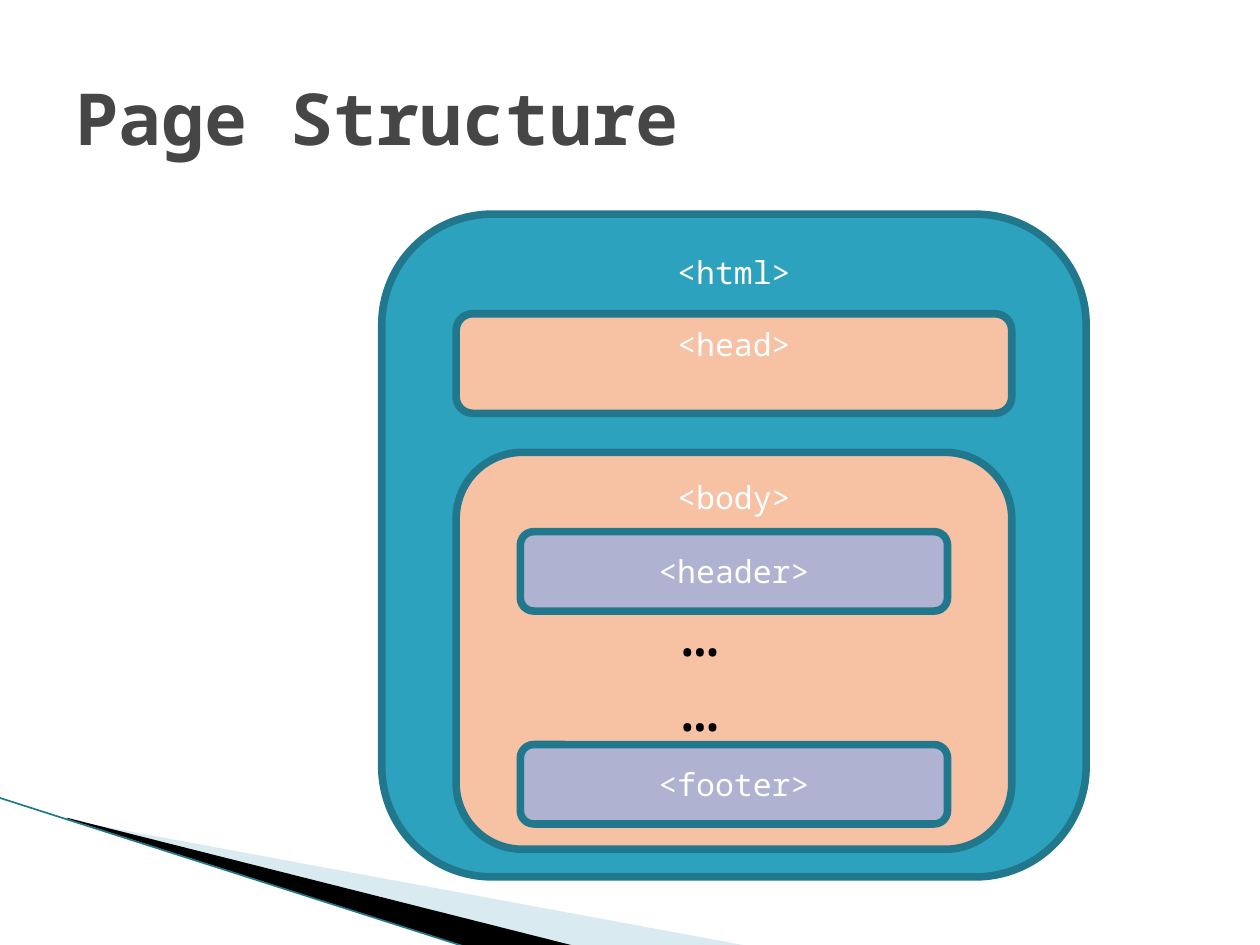
from lxml import etree
from pptx import Presentation, util as u
from pptx.dml.color import RGBColor
from pptx.enum import shapes, text
from pptx.oxml.ns import qn

WIDTH, HEIGHT = u.Inches(10), u.Inches(7.5)
FONT = "Noto Sans Mono"
TEAL = RGBColor(0x2D, 0xA2, 0xBF)
DARK_TEAL = RGBColor(0x21, 0x78, 0x8D)
PEACH = RGBColor(0xF7, 0xC1, 0xA4)
LILAC = RGBColor(0xAF, 0xB2, 0xD0)
PALE_BLUE = RGBColor(0xA0, 0xCB, 0xDC)
GREY = RGBColor(0x46, 0x46, 0x46)
BLACK = RGBColor(0, 0, 0)
WHITE = RGBColor(0xFF, 0xFF, 0xFF)


def write(frame, words, size, color, align, anchor, bold=False):
    """Put one formatted run into a text frame."""
    frame.word_wrap = True
    frame.vertical_anchor = anchor
    para = frame.paragraphs[0]
    para.alignment = align
    span = para.add_run()
    span.text = words
    span.font.name = FONT
    span.font.size = u.Pt(size)
    span.font.bold = bold
    span.font.color.rgb = color


def add_title(page, words):
    """Place and fill the title placeholder."""
    title = page.shapes.title
    title.left, title.top = int(WIDTH * 0.05), int(HEIGHT * 0.04)
    title.width, title.height = int(WIDTH * 0.9), u.Inches(1.25)
    write(title.text_frame, words, 41, GREY, text.PP_ALIGN.LEFT,
          text.MSO_ANCHOR.MIDDLE, bold=True)


def add_wedge(page, points, color, opacity=100):
    """Draw a filled corner wedge through points given in inches."""
    corners = [(u.Inches(x), u.Inches(y)) for x, y in points]
    builder = page.shapes.build_freeform(*corners[0])
    builder.add_line_segments(corners[1:], close=True)
    wedge = builder.convert_to_shape()
    wedge.shadow.inherit = False
    wedge.fill.solid()
    wedge.fill.fore_color.rgb = color
    wedge.line.fill.background()
    if opacity < 100:
        tint = wedge.fill._xPr.find(".//" + qn("a:srgbClr"))
        etree.SubElement(tint, qn("a:alpha"), val=str(opacity * 1000))


def add_edge(page, start, end):
    """Draw the thin line along the corner wedges."""
    edge = page.shapes.add_connector(
        shapes.MSO_CONNECTOR.STRAIGHT, *map(u.Inches, start + end))
    edge.line.color.rgb = DARK_TEAL
    edge.line.width = u.Pt(0.95)
    etree.SubElement(edge._element.spPr, qn("a:effectLst"))


def add_element(page, tag, area, color, anchor):
    """Draw a rounded box labelled with an HTML tag."""
    box = page.shapes.add_shape(
        shapes.MSO_SHAPE.ROUNDED_RECTANGLE, *map(u.Inches, area))
    box.shadow.inherit = False
    box.fill.solid()
    box.fill.fore_color.rgb = color
    box.line.color.rgb = DARK_TEAL
    box.line.width = u.Pt(4.33)
    write(box.text_frame, tag, 18, WHITE, text.PP_ALIGN.CENTER, anchor)


def add_dots(page, words, area):
    """Add the wrapped ellipses between header and footer."""
    box = page.shapes.add_textbox(*map(u.Inches, area))
    write(box.text_frame, words, 36, BLACK, text.PP_ALIGN.LEFT,
          text.MSO_ANCHOR.TOP)
    box.text_frame.auto_size = text.MSO_AUTO_SIZE.SHAPE_TO_FIT_TEXT


def main():
    """Build the slide and save it."""
    deck = Presentation()
    deck.slide_width, deck.slide_height = WIDTH, HEIGHT
    page = deck.slides.add_slide(deck.slide_layouts[5])

    add_wedge(page, [(0.55, 6.51), (5.95, 7.51), (4.56, 7.51), (0.55, 6.5)],
              PALE_BLUE, opacity=40)
    add_wedge(page, [(0.53, 6.49), (4.57, 7.51), (3.72, 7.52), (0.54, 6.5)],
              BLACK)
    add_edge(page, (-0.01, 6.33), (3.71, 7.52))
    add_title(page, "Page Structure")

    top, middle = text.MSO_ANCHOR.TOP, text.MSO_ANCHOR.MIDDLE
    add_element(page, "<html>", (3.03, 1.7, 5.59, 5.26), TEAL, top)
    for tag, y, height in (("<head>", 2.49, 0.79), ("<body>", 3.59, 3.15)):
        add_element(page, tag, (3.62, y, 4.41, height), PEACH, top)
    for tag, y in (("<header>", 4.22), ("<footer>", 5.91)):
        add_element(page, tag, (4.13, y, 3.39, 0.63), LILAC, middle)
    add_dots(page, "……", (5.31, 4.66, 0.79, 1.31))
    deck.save("out.pptx")


if __name__ == "__main__":
    main()
